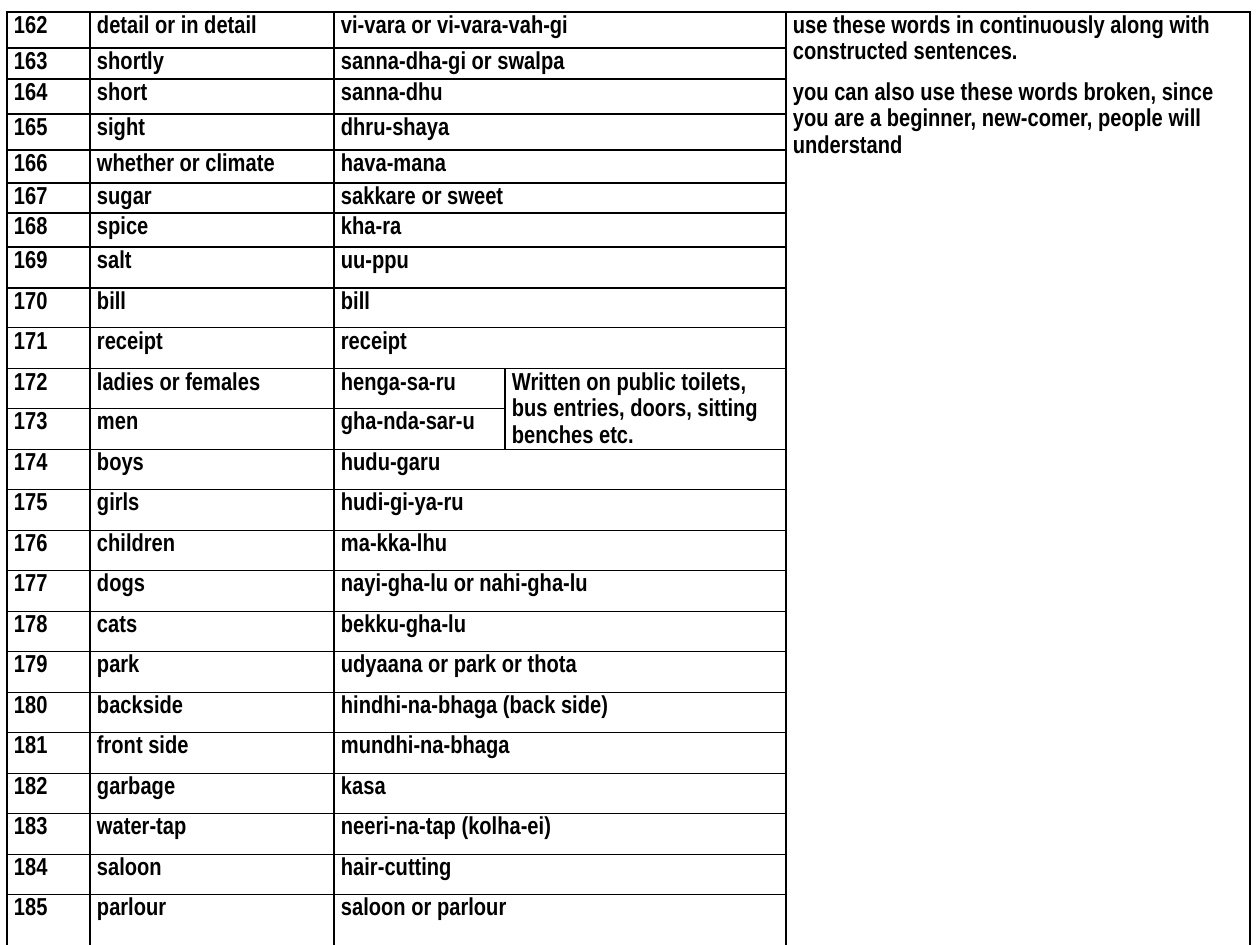
from typing import NamedTuple

from lxml import etree
from pptx import Presentation
from pptx.dml.color import RGBColor
from pptx.enum.text import MSO_ANCHOR, PP_ALIGN
from pptx.oxml.ns import qn
from pptx.util import Emu, Pt

TOP, LEFT = MSO_ANCHOR.TOP, PP_ALIGN.LEFT
SCALE = 914400 / 126  # EMU in one px
FONT, SIZE, INK = "Arial Narrow", 14, "000000"
PAD = 7
FIRST = 162


class Word(NamedTuple):
    text: str
    local: str


class Span(NamedTuple):
    row: int
    col: int
    end_row: int
    end_col: int


WORDS = [
    Word("detail or in detail", "vi-vara or vi-vara-vah-gi"),
    Word("shortly", "sanna-dha-gi or swalpa"),
    Word("short", "sanna-dhu"),
    Word("sight", "dhru-shaya"),
    Word("whether or climate", "hava-mana"),
    Word("sugar", "sakkare or sweet"),
    Word("spice", "kha-ra"),
    Word("salt", "uu-ppu"),
    Word("bill", "bill"),
    Word("receipt", "receipt"),
    Word("ladies or females", "henga-sa-ru"),
    Word("men", "gha-nda-sar-u"),
    Word("boys", "hudu-garu"),
    Word("girls", "hudi-gi-ya-ru"),
    Word("children", "ma-kka-lhu"),
    Word("dogs", "nayi-gha-lu or nahi-gha-lu"),
    Word("cats", "bekku-gha-lu"),
    Word("park", "udyaana or park or thota"),
    Word("backside", "hindhi-na-bhaga (back side)"),
    Word("front side", "mundhi-na-bhaga"),
    Word("garbage", "kasa"),
    Word("water-tap", "neeri-na-tap (kolha-ei)"),
    Word("saloon", "hair-cutting"),
    Word("parlour", "saloon or parlour"),
]
SIGNS = "Written on public toilets, bus entries, doors, sitting benches etc."
ADVICE = (
    "use these words in continuously along with constructed sentences.\n"
    "you can also use these words broken, since you are a beginner, "
    "new-comer, people will understand"
)
COLS = [83, 244, 171, 281, 464]
HEAD = [36, 31, 35, 36, 33, 30, 34]
ROWS = HEAD + [41 - i % 2 for i in range(len(WORDS) - len(HEAD))]
SIGN_ROW = 10  # first of the two rows beside the note on signs


def px(num: int) -> Emu:
    return Emu(round(num * SCALE))


def color(code: str) -> RGBColor:
    return RGBColor.from_string(code)


def frame_cell(cell) -> None:
    """Draw the four borders and clear the fill."""
    props = cell._tc.get_or_add_tcPr()
    for side in ("lnL", "lnR", "lnT", "lnB"):
        line = etree.SubElement(props, qn(f"a:{side}"), w=str(Pt(1)))
        fill = etree.SubElement(line, qn("a:solidFill"))
        etree.SubElement(fill, qn("a:srgbClr"), val=INK)
    cell.fill.background()


def write(cell, text: str) -> None:
    cell.margin_left = cell.margin_right = px(PAD)
    cell.margin_top = cell.margin_bottom = 0
    cell.vertical_anchor = TOP
    cell.text_frame.text = text
    for para in cell.text_frame.paragraphs:
        para.alignment = LEFT
        para.line_spacing = 1.15
        para.space_after = Pt(8)
        for font in [para.font] + [run.font for run in para.runs]:
            font.name, font.size, font.bold = FONT, Pt(SIZE), True
            font.color.rgb = color(INK)


def merge(table, span: Span) -> None:
    start = table.cell(span.row, span.col)
    start.merge(table.cell(span.end_row, span.end_col))


def main() -> None:
    deck = Presentation()
    deck.slide_width, deck.slide_height = px(1260), px(945)
    slide = deck.slides.add_slide(deck.slide_layouts[6])

    # Grid
    frame = slide.shapes.add_table(
        len(ROWS), len(COLS), px(7), px(12), px(sum(COLS)), px(942))
    table = frame.table
    table.first_row = table.horz_banding = False
    for col, wide in zip(table.columns, COLS):
        col.width = px(wide)
    for row, high in zip(table.rows, ROWS):
        row.height = px(high)
    frame.height = px(942)

    # Merged cells
    last = len(ROWS) - 1
    merge(table, Span(0, 4, last, 4))
    merge(table, Span(SIGN_ROW, 3, SIGN_ROW + 1, 3))
    for i in range(len(ROWS)):
        if i not in (SIGN_ROW, SIGN_ROW + 1):
            merge(table, Span(i, 2, i, 3))

    # Borders and base format
    for cell in table.iter_cells():
        frame_cell(cell)
        write(cell, "")

    # Word list and notes
    for i, word in enumerate(WORDS):
        for j, text in enumerate((str(FIRST + i), word.text, word.local)):
            write(table.cell(i, j), text)
    write(table.cell(SIGN_ROW, 3), SIGNS)
    write(table.cell(0, 4), ADVICE)

    deck.save("out.pptx")


if __name__ == "__main__":
    main()
